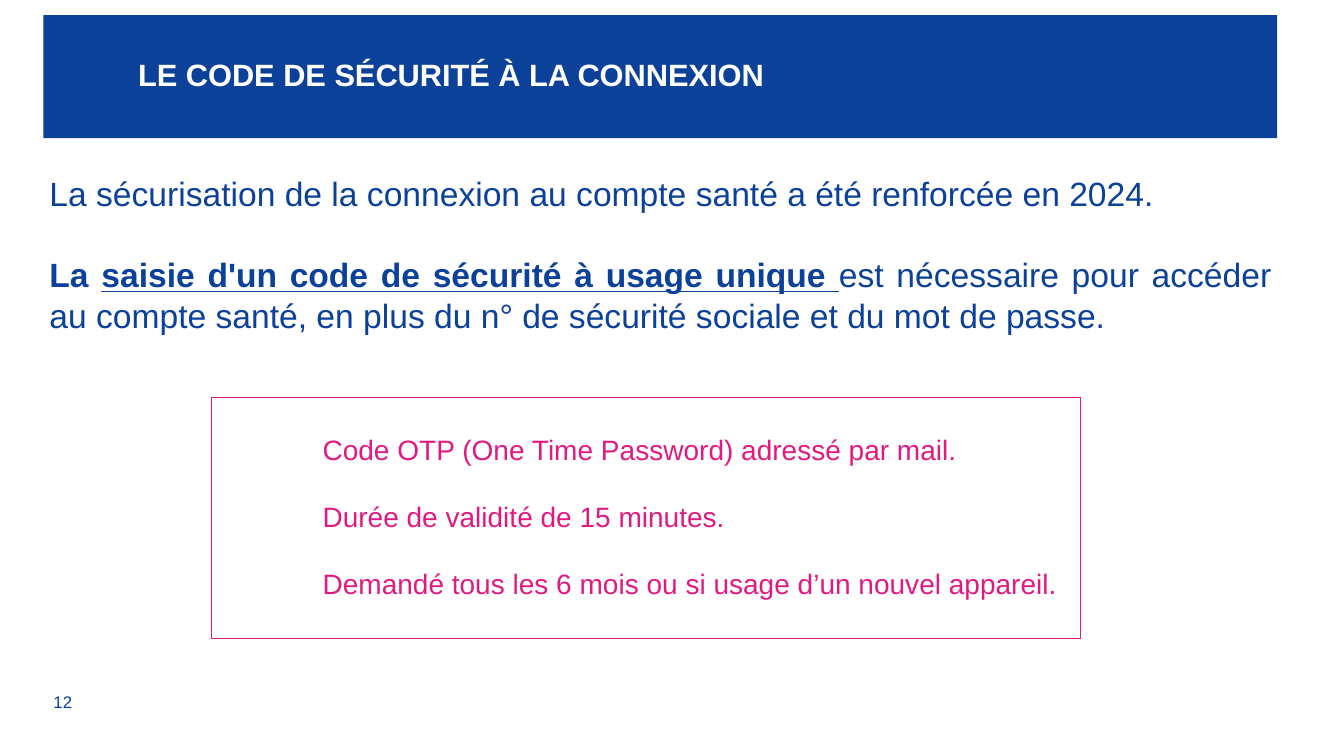
"""Builds the slide about the security code asked for at login."""
from dataclasses import dataclass
from typing import Optional

from pptx import Presentation
from pptx.dml.color import RGBColor
from pptx.enum.shapes import MSO_SHAPE
from pptx.enum.text import MSO_ANCHOR, PP_ALIGN
from pptx.util import Inches, Pt

WHITE = RGBColor(0xFF, 0xFF, 0xFF)
BLUE = RGBColor(0x0C, 0x41, 0x9A)
PINK = RGBColor(0xE1, 0x1A, 0x81)
SLIDE_WIDTH, SLIDE_HEIGHT = Inches(13.33), Inches(7.5)


@dataclass(frozen=True)
class Run:
    text: str
    bold: Optional[bool] = None
    underline: Optional[bool] = None


@dataclass(frozen=True)
class Block:
    """Text block; position, size and insets are percentages of the slide."""
    left: float
    top: float
    width: float
    height: float
    paragraphs: list[list[Run]]
    size: int
    color: RGBColor
    fill: Optional[RGBColor] = None
    line: Optional[RGBColor] = None
    inset_left: float = 0.75
    inset_top: float = 0.67
    anchor: MSO_ANCHOR = MSO_ANCHOR.TOP
    align: PP_ALIGN = PP_ALIGN.LEFT
    gap: int = 0
    bold: bool = False
    line_spacing: Optional[float] = None


BLOCKS = [
    Block(3.23, 90.8, 5.93, 4.13, [[Run("12")]], 12, BLUE,
          anchor=MSO_ANCHOR.MIDDLE),
    Block(3.23, 2, 91.8, 16.27, [[Run("LE CODE DE SÉCURITÉ À LA CONNEXION")]],
          22, WHITE, fill=BLUE, inset_left=7.05, anchor=MSO_ANCHOR.MIDDLE,
          bold=True, line_spacing=0.9),
    Block(2.93, 22.27, 92.4, 27.33, [
        [Run("La sécurisation de la connexion au compte santé a été renforcée en 2024.")],
        [Run("La ", bold=True),
         Run("saisie d'un code de sécurité à usage unique ", bold=True, underline=True),
         Run("est nécessaire pour accéder au compte santé, en plus du n° de "
             "sécurité sociale et du mot de passe.")],
    ], 24, BLUE, align=PP_ALIGN.JUSTIFY, gap=29),
    Block(15.75, 52.53, 64.65, 31.87, [
        [Run("Code OTP (One Time Password) adressé par mail.")],
        [Run("Durée de validité de 15 minutes.")],
        [Run("Demandé tous les 6 mois ou si usage d’un nouvel appareil.")],
    ], 20, PINK, line=PINK, inset_left=8.25, inset_top=4.67, gap=24),
]


def across(percent: float) -> int:
    return round(SLIDE_WIDTH * percent / 100)


def down(percent: float) -> int:
    return round(SLIDE_HEIGHT * percent / 100)


def draw_block(slide, block: Block) -> None:
    place = (across(block.left), down(block.top),
             across(block.width), down(block.height))
    if block.fill or block.line:
        shape = slide.shapes.add_shape(MSO_SHAPE.RECTANGLE, *place)
        shape.shadow.inherit = False
    else:
        shape = slide.shapes.add_textbox(*place)
    if block.fill:
        shape.fill.solid()
        shape.fill.fore_color.rgb = block.fill
    else:
        shape.fill.background()
    if block.line:
        shape.line.color.rgb = block.line
        shape.line.width = Pt(0.75)
    else:
        shape.line.fill.background()
    write_text(shape.text_frame, block)


def write_text(frame, block: Block) -> None:
    frame.word_wrap = True
    frame.vertical_anchor = block.anchor
    frame.margin_left = across(block.inset_left)
    frame.margin_top = down(block.inset_top)
    for index, runs in enumerate(block.paragraphs):
        paragraph = frame.add_paragraph() if index else frame.paragraphs[0]
        paragraph.alignment = block.align
        if block.line_spacing:
            paragraph.line_spacing = block.line_spacing
        if index:
            paragraph.space_before = Pt(block.gap)
        font = paragraph.font
        font.name, font.size, font.bold = "Arial", Pt(block.size), block.bold
        font.color.rgb = block.color
        for item in runs:
            run = paragraph.add_run()
            run.text = item.text
            run.font.bold = item.bold
            run.font.underline = item.underline


def main() -> None:
    presentation = Presentation()
    presentation.slide_width = SLIDE_WIDTH
    presentation.slide_height = SLIDE_HEIGHT
    slide = presentation.slides.add_slide(presentation.slide_layouts[6])
    for block in BLOCKS:
        draw_block(slide, block)
    presentation.save("out.pptx")


if __name__ == "__main__":
    main()
